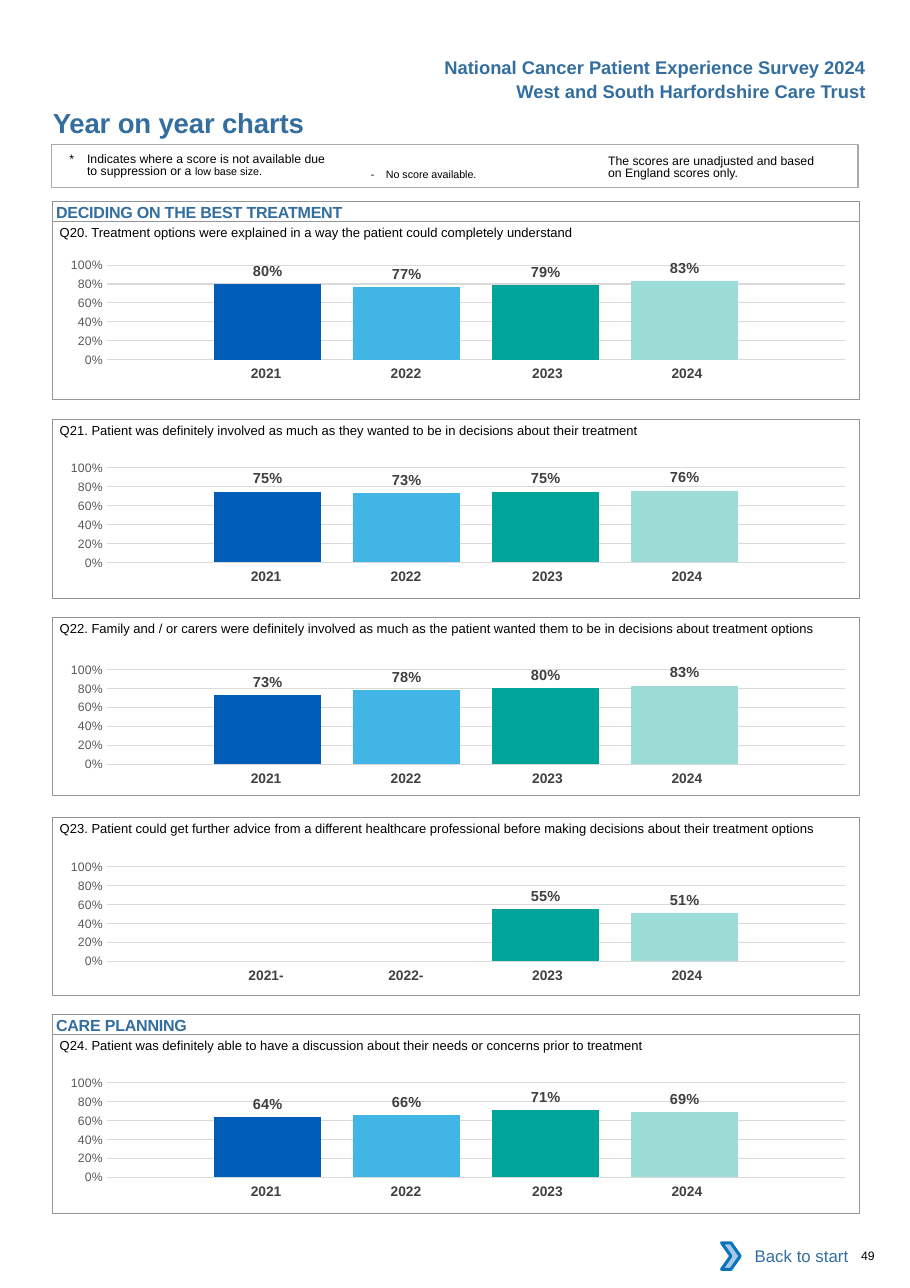
from dataclasses import dataclass

import pptx
import pptx.chart.data
import pptx.dml.color
import pptx.enum.chart
import pptx.enum.shapes
import pptx.enum.text
import pptx.oxml
import pptx.oxml.ns
import pptx.util

Pt = pptx.util.Pt
RGB = pptx.dml.color.RGBColor.from_string
qn = pptx.oxml.ns.qn
ALIGN = pptx.enum.text.PP_ALIGN
ANCHOR = pptx.enum.text.MSO_ANCHOR
SHAPE = pptx.enum.shapes.MSO_SHAPE


@dataclass(frozen=True)
class Theme:
    font: str = "Arial"
    blue: str = "336E9F"
    black: str = "000000"
    white: str = "FFFFFF"
    frame: str = "939598"
    legend_frame: str = "A9AAAD"
    grid: str = "D9D9D9"
    axis: str = "595959"
    label: str = "404040"
    year: str = "414042"
    chevron: str = "A8C7E9"
    chevron_line: str = "0A74BB"
    bars: tuple = ("005EB8", "41B6E6", "00A499", "9CDCD7")
    title_size: float = 18
    header_size: float = 12
    link_size: float = 11
    section_size: float = 10.5
    label_size: float = 9.5
    year_size: float = 9
    question_size: float = 8.5
    note_size: float = 8
    fine_size: float = 7


T = Theme()
LEFT, WIDTH = 34.4, 527
PANEL_H, BAND_H = 116.6, 13
YEARS = ("2021", "2022", "2023", "2024")

# top, chart offset, question, years, scores
PANELS = [
    (144.7, 15.1, "Q20. Treatment options were explained in a way the patient could completely understand",
     YEARS, (0.80, 0.77, 0.79, 0.83)),
    (274.3, 18, "Q21. Patient was definitely involved as much as they wanted to be in decisions about their treatment",
     YEARS, (0.75, 0.73, 0.75, 0.76)),
    (403.2, 20.9, "Q22. Family and / or carers were definitely involved as much as the patient wanted them to be "
     "in decisions about treatment options", YEARS, (0.73, 0.78, 0.80, 0.83)),
    (534.2, 18.7, "Q23. Patient could get further advice from a different healthcare professional before making "
     "decisions about their treatment options", ("2021-", "2022-", "2023", "2024"), (None, None, 0.55, 0.51)),
    (676.1, 18, "Q24. Patient was definitely able to have a discussion about their needs or concerns prior to treatment",
     YEARS, (0.64, 0.66, 0.71, 0.69)),
]
SECTIONS = [(144.7, "DECIDING ON THE BEST TREATMENT"), (676.1, "CARE PLANNING")]


def set_font(font, size, color, bold=False):
    font.name, font.size, font.bold = T.font, Pt(size), bold
    font.color.rgb = RGB(color)


def write(sp, text, size, color=T.black, bold=False, align=ALIGN.LEFT, anchor=ANCHOR.TOP, insets=(0, 0, 0, 0)):
    """Fill a shape with one paragraph; insets run left, top, right, bottom."""
    tf = sp.text_frame
    tf.word_wrap, tf.vertical_anchor = True, anchor
    tf.margin_left, tf.margin_top, tf.margin_right, tf.margin_bottom = map(Pt, insets)
    p = tf.paragraphs[0]
    p.text, p.alignment = text, align
    set_font(p.font, size, color, bold)
    return p


def add_text(s, x, y, w, h, text, size, **style):
    return write(s.shapes.add_textbox(Pt(x), Pt(y), Pt(w), Pt(h)), text, size, **style)


def add_box(s, x, y, w, h, kind=SHAPE.RECTANGLE, fill=None, line=None, weight=0.5):
    sp = s.shapes.add_shape(kind, Pt(x), Pt(y), Pt(w), Pt(h))
    sp.shadow.inherit = False
    if fill:
        sp.fill.solid()
        sp.fill.fore_color.rgb = RGB(fill)
    else:
        sp.fill.background()
    if line:
        sp.line.color.rgb, sp.line.width = RGB(line), Pt(weight)
    else:
        sp.line.fill.background()
    return sp


def tighten(p):
    for r in p.runs:
        r.font._element.set("spc", "-10")


def hang(p, indent):
    pPr = p._p.get_or_add_pPr()
    pPr.set("marL", str(Pt(indent)))
    pPr.set("indent", str(-Pt(indent)))


def add_header(s):
    lines = ("National Cancer Patient Experience Survey 2024", "West and South Harfordshire Care Trust")
    for i, line in enumerate(lines):
        add_text(s, 273, 33.1 + 15.9 * i, 300, 21.6, line, T.header_size, color=T.blue, bold=True,
                 align=ALIGN.RIGHT, insets=(7.2, 3.6, 7.2, 3.6))
    title = s.shapes.title
    title.left, title.top, title.width, title.height = Pt(33.8), Pt(69.1), Pt(324), Pt(21.6)
    tighten(write(title, "Year on year charts", T.title_size, T.blue, True, insets=(0.7, 0, 0, 0)))


def add_legend(s, x, y, w, h):
    add_box(s, x, y, w, h, line=T.legend_frame, weight=0.75)
    p = add_text(s, x + 11.6, y + 3.7, 172, 20,
                 "*\tIndicates where a score is not available due to suppression or a ", T.note_size,
                 insets=(0, 2.2, 0, 0))
    p.line_spacing = Pt(8.1)
    hang(p, 11.5)
    r = p.add_run()
    r.text, r.font.size = "low base size.", Pt(T.fine_size)
    p = add_text(s, x + 208.6, y + 15.5, 118, 10, "-\tNo score available.", T.fine_size)
    hang(p, 9.8)
    p = add_text(s, x + 363.6, y + 5.1, 144.7, 19.4, "The scores are unadjusted and based on England scores only.",
                 T.note_size, insets=(0, 2.2, 0, 0))
    p.line_spacing = Pt(8.1)


def add_section(s, x, y, w, h, name):
    sp = add_box(s, x, y, w, h, line=T.frame)
    tighten(write(sp, name, T.section_size, T.blue, True, insets=(2.2, 0.7, 0, 0)))


def add_score_chart(s, x, y, w, h, scores):
    data = pptx.chart.data.CategoryChartData(number_format="0%")
    data.categories = ["1"]
    for i, score in enumerate(scores, 1):
        data.add_series(f"Series {i}", [score])
    kind = pptx.enum.chart.XL_CHART_TYPE.COLUMN_CLUSTERED
    chart = s.shapes.add_chart(kind, Pt(x), Pt(y), Pt(w), Pt(h), data).chart
    chart.has_legend = chart.has_title = False
    set_font(chart.font, T.note_size, T.axis)
    chart.category_axis.visible = False
    axis = chart.value_axis
    axis.minimum_scale, axis.maximum_scale, axis.major_unit = 0, 1, 0.2
    axis.major_tick_mark = axis.minor_tick_mark = pptx.enum.chart.XL_TICK_MARK.NONE
    axis.format.line.fill.background()
    axis.tick_labels.number_format, axis.tick_labels.number_format_is_linked = "0%", False
    set_font(axis.tick_labels.font, T.note_size, T.axis)
    grid = axis.major_gridlines.format.line
    grid.color.rgb, grid.width = RGB(T.grid), Pt(0.75)
    plot = chart.plots[0]
    plot.gap_width, plot.overlap, plot.vary_by_categories = 200, -30, False
    for series, color in zip(plot.series, T.bars):
        series.invert_if_negative = False
        series.format.fill.solid()
        series.format.fill.fore_color.rgb = RGB(color)
        labels = series.data_labels
        labels.show_value = True
        labels.position = pptx.enum.chart.XL_LABEL_POSITION.OUTSIDE_END
        labels.number_format, labels.number_format_is_linked = "0%", False
        set_font(labels.font, T.label_size, T.label, True)
    area = chart._chartSpace.chart.plotArea
    for old in area.findall(qn("c:layout")):
        area.remove(old)
    parts = [("layoutTarget", "inner"), ("xMode", "edge"), ("yMode", "edge"),
             ("x", 0.08), ("y", 0.145), ("w", 0.915), ("h", 0.666)]
    inner = "".join(f'<c:{tag} val="{val}"/>' for tag, val in parts)
    area.insert(0, pptx.oxml.parse_xml(
        f'<c:layout {pptx.oxml.ns.nsdecls("c")}><c:manualLayout>{inner}</c:manualLayout></c:layout>'))


def add_year_row(s, x, y, years):
    widths, right_insets = (91.4, 91.4, 96.5, 91.4), (0, 0, 2.9, 8.6)
    frame = s.shapes.add_table(1, len(years), Pt(x), Pt(y), Pt(sum(widths)), Pt(19.4))
    table = frame.table
    table.first_row = table.horz_banding = False
    no_style = "{2D5ABB26-0587-4C30-8999-92F81FD0307C}"
    frame._element.find(".//" + qn("a:tableStyleId")).text = no_style
    for i, year in enumerate(years):
        table.columns[i].width = Pt(widths[i])
        cell = table.cell(0, i)
        cell.fill.background()
        cell.margin_left, cell.margin_right = Pt(7.2), Pt(right_insets[i])
        cell.margin_top = cell.margin_bottom = Pt(3.6)
        p = cell.text_frame.paragraphs[0]
        p.text, p.alignment = year, ALIGN.CENTER
        set_font(p.font, T.year_size, T.year, True)


def add_panel(s, x, y, w, h, chart_drop, question, years, scores):
    add_score_chart(s, x - 6.3, y + chart_drop, w, 92.9, scores)
    add_year_row(s, x + 90.2, y + chart_drop + 76, years)
    add_box(s, x, y, w, h, line=T.frame)
    add_text(s, x + 4.6, y, w - 5, 14.4, question, T.question_size, anchor=ANCHOR.MIDDLE)


def add_footer(s, x, y):
    link = add_box(s, x, y, 85, 30.2, fill=T.white)
    write(link, "Back to start", T.link_size, T.blue, align=ALIGN.RIGHT, anchor=ANCHOR.MIDDLE,
          insets=(7.2, 3.6, 7.2, 3.6))
    add_box(s, x - 5, y + 6.5, 12.2, 17.3, SHAPE.CHEVRON, T.chevron, T.chevron_line, 2)
    add_text(s, x + 86.2, y + 10.1, 30, 9.4, "49", T.note_size)


def main():
    prs = pptx.Presentation()
    prs.slide_width, prs.slide_height = Pt(594.72), Pt(841.68)
    s = prs.slides.add_slide(prs.slide_layouts[5])
    add_header(s)
    add_legend(s, 33.8, 94.3, WIDTH, 28)
    for top, *content in PANELS:
        add_panel(s, LEFT, top, WIDTH, PANEL_H, *content)
    for top, name in SECTIONS:
        add_section(s, LEFT, top - BAND_H, WIDTH, BAND_H, name)
    add_footer(s, 476.6, 805.7)
    prs.save("out.pptx")


if __name__ == "__main__":
    main()
